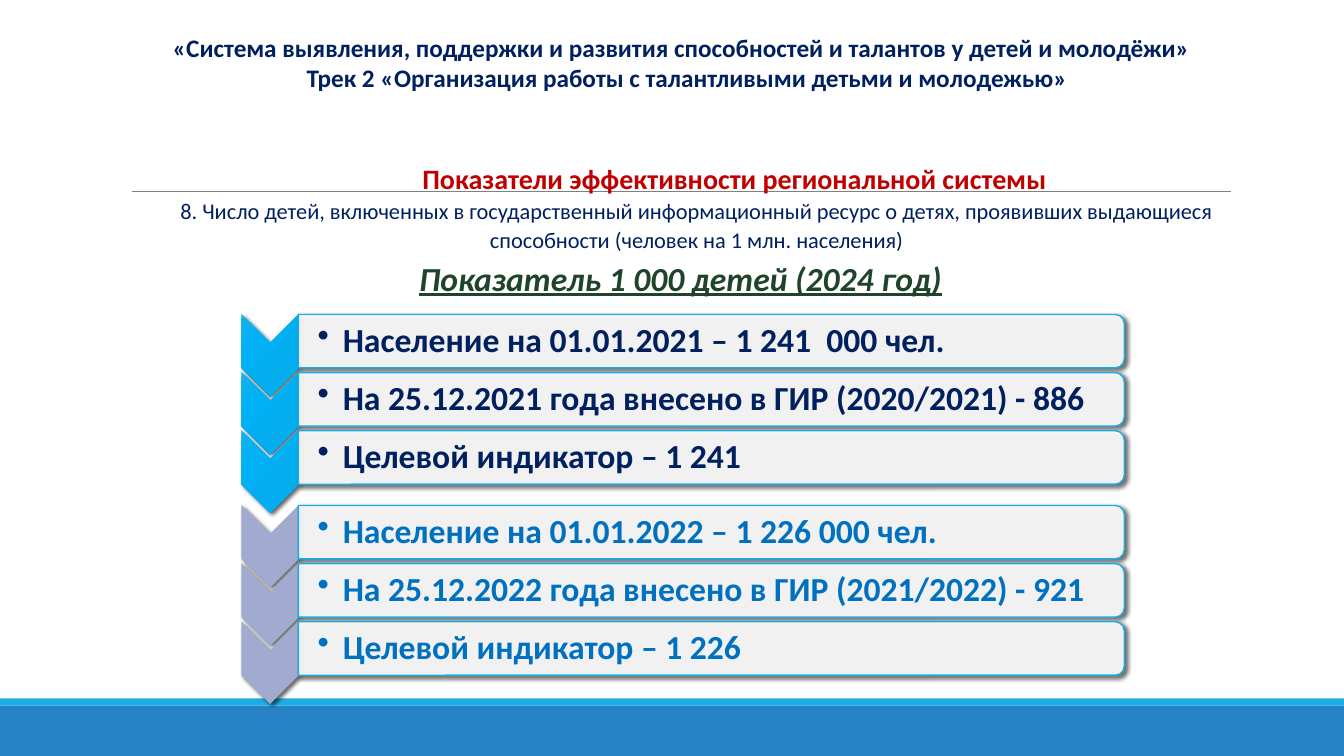
from lxml import etree
from pptx import Presentation, util as u
from pptx.dml.color import RGBColor
from pptx.enum import shapes, text
from pptx.oxml import ns, parse_xml

THEME = {
    "font": "Calibri",
    "navy": "002060", "blue": "0070C0", "red": "C00000", "green": "1F442A",
    "white": "FFFFFF", "footer": "2683C6", "accent": "1CADE4", "rule": "808080",
    "bright": [(0, "00ADEF"), (34, "03ADEE"), (70, "00B1F5"), (100, "12B1EE")],
    "muted": [(0, "A1ABD0"), (100, "A1ABD0")],
    "title": 18, "heading": 20, "body": 16, "row": 24,
}
A = ns.nsdecls("a")
SHADOW = (f'<a:effectLst {A}><a:outerShdw blurRad="38100" dist="25400" dir="2700000" '
          'algn="ctr" rotWithShape="0"><a:srgbClr val="000000"><a:alpha val="60000"/>'
          '</a:srgbClr></a:outerShdw></a:effectLst>')


def add_part(parent, kind, box, fill, line=None, turn=0):
    """Add a preset shape with a plain fill and an optional 1 pt outline."""
    part = parent.add_shape(kind, *(u.Inches(v) for v in box))
    part.rotation = turn
    part.shadow.inherit = False
    part.fill.solid()
    part.fill.fore_color.rgb = RGBColor.from_string(THEME[fill])
    if line:
        part.line.color.rgb = RGBColor.from_string(THEME[line])
        part.line.width = u.Pt(1)
    else:
        part.line.fill.background()
    return part


def write(box, lines, **frame_format):
    """Write (words, size, colour, font format, spacing) lines into a box."""
    frame = box.text_frame
    for name, value in {"word_wrap": True, **frame_format}.items():
        setattr(frame, name, value)
    for i, (words, size, colour, font_format, spacing) in enumerate(lines):
        para = frame.add_paragraph() if i else frame.paragraphs[0]
        para.line_spacing = spacing
        para.alignment = text.PP_ALIGN.CENTER
        span = para.add_run()
        span.text = words
        span.font.color.rgb = RGBColor.from_string(THEME[colour])
        looks = {"name": THEME["font"], "size": u.Pt(THEME[size]), **font_format}
        for name, value in looks.items():
            setattr(span.font, name, value)
    return frame.paragraphs[0]


deck = Presentation()
deck.slide_width, deck.slide_height = u.Inches(13.33), u.Inches(7.5)
page = deck.slides.add_slide(deck.slide_layouts[5])

# Footer bands and rule
add_part(page.shapes, shapes.MSO_SHAPE.RECTANGLE, (0, 7, 13.33, 0.5), "footer")
add_part(page.shapes, shapes.MSO_SHAPE.RECTANGLE, (0, 6.93, 13.33, 0.07), "accent")
rule = page.shapes.add_connector(shapes.MSO_CONNECTOR.STRAIGHT, u.Inches(1.31),
                                 u.Inches(1.9), u.Inches(12.21), u.Inches(1.9))
rule.line.color.rgb = RGBColor.from_string(THEME["rule"])
rule.line.width = u.Pt(0.5)
etree.SubElement(rule._element.spPr, ns.qn("a:effectLst"))

# Title
title = page.shapes.title
for side, value in zip(("left", "top", "width", "height"), (1.6, 0.25, 10.43, 0.73)):
    setattr(title, side, u.Inches(value))
bold = {"bold": True}
write(title, [
    ("«Система выявления, поддержки и развития способностей и талантов у детей и молодёжи»  ",
     "title", "navy", bold, 1.07),
    ("Трек 2 «Организация работы с талантливыми детьми и молодежью»",
     "title", "navy", bold, 1.0),
], vertical_anchor=text.MSO_ANCHOR.TOP, auto_size=text.MSO_AUTO_SIZE.NONE)

# Indicator and its target
indicator = page.shapes.add_textbox(*(u.Inches(v) for v in (1.6, 1.53, 10.62, 1.04)))
heading = write(indicator, [
    ("Показатели эффективности региональной системы", "heading", "red", bold, 1.07),
    ("8. Число детей, включенных в государственный информационный ресурс о детях, "
     "проявивших выдающиеся способности (человек на 1 млн. населения)",
     "body", "navy", {"bold": False}, 1.07),
])
heading._p.get_or_add_pPr().set("marL", str(u.Inches(0.75)))
target = page.shapes.add_textbox(*(u.Inches(v) for v in (2.83, 2.48, 7.84, 0.53)))
write(target, [("Показатель 1 000 детей (2024 год)", "row", "green",
                {"bold": True, "italic": True, "underline": True}, 1.07)])

# Two yearly lists: first row centre, chevron colours, text colour, rows
YEARS = [
    (3.385, "bright", "navy", ["Население на 01.01.2021 – 1 241  000 чел.",
                              "На 25.12.2021 года внесено в ГИР (2020/2021) - 886",
                              "Целевой индикатор – 1 241"]),
    (5.28, "muted", "blue", ["Население на 01.01.2022 – 1 226 000 чел.",
                             "На 25.12.2022 года внесено в ГИР (2021/2022) - 921",
                             "Целевой индикатор – 1 226"]),
]
PITCH, BAR_LEFT, BAR_LONG, BAR_HIGH = 0.577, 2.96, 8.19, 0.53
CHEVRON_LONG, CHEVRON_WIDE, CHEVRON_X, CHEVRON_DROP = 0.82, 0.57, 2.68, 0.14
ROW_FRAME = {"vertical_anchor": text.MSO_ANCHOR.MIDDLE, "margin_left": u.Inches(0.19),
             "margin_right": u.Inches(0.02), "margin_top": u.Inches(0.02),
             "margin_bottom": u.Inches(0.02)}

for first, stops, colour, rows in YEARS:
    group = page.shapes.add_group_shape().shapes
    for i, words in enumerate(rows):
        middle = first + i * PITCH
        # Upright shapes turned a quarter about their centres
        chevron = add_part(group, shapes.MSO_SHAPE.CHEVRON,
                           (CHEVRON_X - CHEVRON_LONG / 2,
                            middle + CHEVRON_DROP - CHEVRON_WIDE / 2,
                            CHEVRON_LONG, CHEVRON_WIDE), "accent", turn=90)
        marks = "".join(f'<a:gs pos="{at * 1000}"><a:srgbClr val="{tone}"/></a:gs>'
                        for at, tone in THEME[stops])
        solid = chevron._element.spPr.find(ns.qn("a:solidFill"))
        solid.getparent().replace(solid, parse_xml(
            f'<a:gradFill {A} rotWithShape="1"><a:gsLst>{marks}</a:gsLst><a:path path="circle">'
            '<a:fillToRect l="100000" t="100000" r="0" b="0"/></a:path></a:gradFill>'))
        bar = add_part(group, shapes.MSO_SHAPE.ROUND_2_SAME_RECTANGLE,
                       (BAR_LEFT + (BAR_LONG - BAR_HIGH) / 2, middle - BAR_LONG / 2,
                        BAR_HIGH, BAR_LONG), "white", "accent", 90)
        tone = bar._element.spPr.find(ns.qn("a:solidFill"))[0]
        etree.SubElement(tone, ns.qn("a:alpha"), val="90000")
        for part in (chevron, bar):
            effects = part._element.spPr.find(ns.qn("a:effectLst"))
            effects.getparent().replace(effects, parse_xml(SHADOW))
        # Bulleted row text
        label = group.add_textbox(*(u.Inches(v) for v in (BAR_LEFT, middle - 0.24, 8.16, 0.48)))
        para = write(label, [(words, "row", colour, bold, 0.9)], **ROW_FRAME)
        para.alignment = text.PP_ALIGN.LEFT
        props = para._p.get_or_add_pPr()
        props.set("marL", str(u.Inches(0.25)))
        props.set("indent", str(u.Inches(-0.25)))
        etree.SubElement(props, ns.qn("a:buChar"), char="•")

deck.save("out.pptx")
